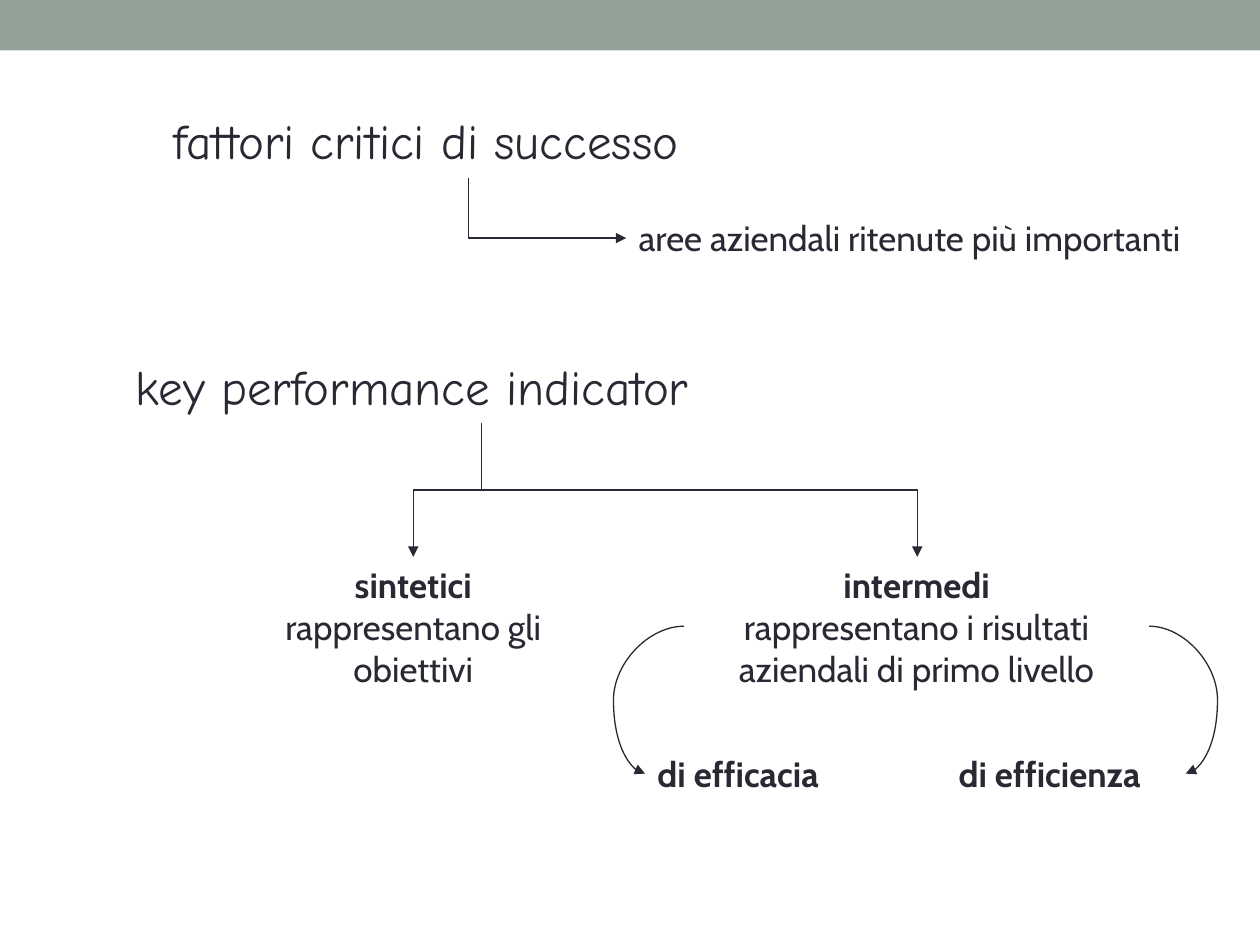
"""Build a slide on critical success factors and key performance indicators."""
from dataclasses import dataclass

from lxml import etree
from pptx import Presentation
from pptx.dml.color import RGBColor
from pptx.enum.shapes import MSO_CONNECTOR, MSO_SHAPE
from pptx.enum.text import MSO_AUTO_SIZE, PP_ALIGN
from pptx.oxml.ns import qn
from pptx.slide import Slide
from pptx.util import Inches, Pt

RECTANGLE = MSO_SHAPE.RECTANGLE
ELBOW, CURVE = MSO_CONNECTOR.ELBOW, MSO_CONNECTOR.CURVE
LEFT, CENTER = PP_ALIGN.LEFT, PP_ALIGN.CENTER
FIT_TEXT = MSO_AUTO_SIZE.SHAPE_TO_FIT_TEXT

COLORS = {"band": "93A299", "ink": "292934"}
FORMATS = {
    "heading": {"name": "Comic Neue", "size": Pt(28), "bold": False},
    "body": {"name": "Cabin", "size": Pt(20), "bold": False},
    "term": {"name": "Cabin", "size": Pt(20), "bold": True},
}


@dataclass(frozen=True)
class Label:
    """Text box with (text, format name) paragraphs."""
    left: float
    top: float
    width: float
    height: float
    paragraphs: tuple[tuple[str, str], ...]
    align: PP_ALIGN = LEFT


@dataclass(frozen=True)
class Link:
    """Arrow from start to end; a descending one leaves its start vertically."""
    start: tuple[float, float]
    end: tuple[float, float]
    kind: MSO_CONNECTOR
    preset: str
    bend: float | None = None
    descending: bool = False


LABELS = (
    Label(1.28, 0.83, 4.89, 0.57, (("fattori critici di successo", "heading"),)),
    Label(4.97, 1.67, 5.39, 0.44,
          (("aree aziendali ritenute più importanti", "body"),)),
    Label(0.98, 2.78, 5.68, 0.57, (("key performance indicator", "heading"),)),
    Label(1.97, 4.42, 2.62, 1.11,
          (("sintetici", "term"), ("rappresentano gli obiettivi", "body")), CENTER),
    Label(5.43, 4.42, 3.69, 1.11,
          (("intermedi", "term"),
           ("rappresentano i risultati aziendali di primo livello", "body")), CENTER),
    Label(5.12, 5.92, 1.73, 0.44, (("di efficacia", "term"),)),
    Label(7.51, 5.92, 1.9, 0.44, (("di efficienza", "term"),)),
)
INDICATOR_BASE = (3.82, 3.36)
LINKS = (
    Link((3.72, 1.41), (4.97, 1.89), ELBOW, "bentConnector2", descending=True),
    Link(INDICATOR_BASE, (3.28, 4.42), ELBOW, "bentConnector3", 0.5, True),
    Link(INDICATOR_BASE, (7.28, 4.42), ELBOW, "bentConnector3", 0.5, True),
    Link((5.43, 4.97), (5.12, 6.14), CURVE, "curvedConnector3", 1.81),
    Link((9.12, 4.97), (9.41, 6.14), CURVE, "curvedConnector3", 1.87),
)


def ink(name: str) -> RGBColor:
    """Return a palette colour."""
    return RGBColor.from_string(COLORS[name])


def draw_band(slide: Slide) -> None:
    """Draw the strip across the top."""
    band = slide.shapes.add_shape(RECTANGLE, 0, 0, Inches(10), Inches(0.4))
    band.shadow.inherit = False
    band.fill.solid()
    band.fill.fore_color.rgb = ink("band")
    band.line.fill.background()


def draw_label(slide: Slide, label: Label) -> None:
    """Draw one text box."""
    box = slide.shapes.add_textbox(Inches(label.left), Inches(label.top),
                                   Inches(label.width), Inches(label.height))
    frame = box.text_frame
    frame.word_wrap = True
    frame.auto_size = FIT_TEXT
    for index, (text, format_name) in enumerate(label.paragraphs):
        paragraph = frame.add_paragraph() if index else frame.paragraphs[0]
        paragraph.alignment = label.align
        run = paragraph.add_run()
        run.text = text
        for attribute, value in FORMATS[format_name].items():
            setattr(run.font, attribute, value)
        run.font.color.rgb = ink("ink")


def draw_link(slide: Slide, link: Link) -> None:
    """Draw one arrow, turning its frame a quarter when it descends."""
    (x1, y1), (x2, y2) = link.start, link.end
    turn = 0
    if link.descending:
        turn = 1 if x2 < x1 else -1
        middle_x, middle_y = (x1 + x2) / 2, (y1 + y2) / 2
        half_length, half_breadth = turn * (y2 - y1) / 2, abs(x2 - x1) / 2
        x1, x2 = middle_x - half_length, middle_x + half_length
        y1, y2 = middle_y - half_breadth, middle_y + half_breadth
    arrow = slide.shapes.add_connector(link.kind, Inches(x1), Inches(y1),
                                       Inches(x2), Inches(y2))
    arrow.line.color.rgb = ink("ink")
    arrow.line.width = Pt(0.75)
    properties = arrow.element.spPr
    if turn:
        properties.find(qn("a:xfrm")).set("rot", str(turn * 90 % 360 * 60000))
    geometry = properties.find(qn("a:prstGeom"))
    geometry.set("prst", link.preset)
    if link.bend is not None:
        adjustments = geometry.find(qn("a:avLst"))
        if adjustments is None:
            adjustments = etree.SubElement(geometry, qn("a:avLst"))
        etree.SubElement(adjustments, qn("a:gd"), name="adj1",
                         fmla=f"val {round(link.bend * 100000)}")
    etree.SubElement(properties.find(qn("a:ln")), qn("a:tailEnd"), type="triangle")
    etree.SubElement(properties, qn("a:effectLst"))


def main() -> None:
    """Build and save the slide."""
    presentation = Presentation()
    presentation.slide_width, presentation.slide_height = Inches(10), Inches(7.5)
    slide = presentation.slides.add_slide(presentation.slide_layouts[6])
    draw_band(slide)
    for label in LABELS:
        draw_label(slide, label)
    for link in LINKS:
        draw_link(slide, link)
    presentation.save("out.pptx")


if __name__ == "__main__":
    main()
